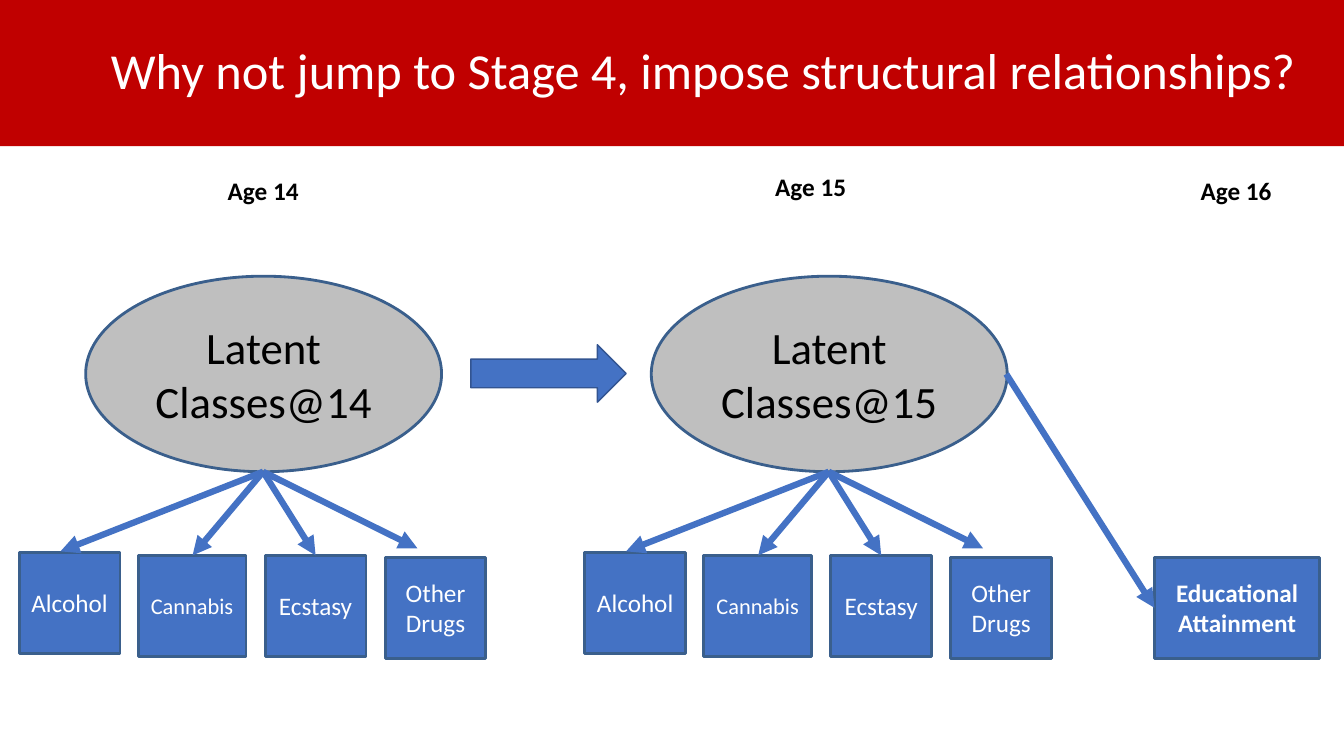
import pptx
import pptx.util
import pptx.dml.color
import pptx.enum.shapes
import pptx.enum.text
import pptx.oxml.ns
import lxml.etree

Inches = pptx.util.Inches
Pt = pptx.util.Pt
SHAPE = pptx.enum.shapes.MSO_SHAPE
ALIGN = pptx.enum.text.PP_ALIGN
MIDDLE = pptx.enum.text.MSO_ANCHOR.MIDDLE
BLUE, EDGE, WHITE, BLACK = "4472C4", "3A5F8C", "FFFFFF", "000000"
DRUGS = [
    ("Alcohol", 0, 2.74, 1, 18, 0.41, 2.73),
    ("Cannabis", 1.18, 2.77, 1.07, 16, 1.72, 2.77),
    ("Ecstasy", 2.44, 2.77, 1, 18, 2.94, 2.77),
    ("Other Drugs", 3.63, 2.79, 1, 18, 3.95, 2.7),
]


def paint(target, color):
    """Give a fill or line fill a solid colour."""
    target.solid()
    target.fore_color.rgb = pptx.dml.color.RGBColor.from_string(color)


def write(frame, text, size, color, align=ALIGN.CENTER, bold=False):
    """Put one formatted paragraph in a text frame."""
    frame.text = text
    line = frame.paragraphs[0]
    line.alignment = align
    line.font.name = "Calibri"
    line.font.size = Pt(size)
    line.font.bold = bold
    paint(line.font.fill, color)
    return line


def node(slide, kind, box, fill, edge=EDGE, width=2):
    """Draw a filled and outlined shape in a box."""
    shape = slide.shapes.add_shape(kind, *map(Inches, box))
    shape.shadow.inherit = False
    paint(shape.fill, fill)
    paint(shape.line.fill, edge)
    shape.line.width = Pt(width)
    shape.text_frame.word_wrap = True
    shape.text_frame.vertical_anchor = MIDDLE
    return shape


def arrow(slide, start, end):
    """Draw a thick line with a triangle at its end."""
    straight = pptx.enum.shapes.MSO_CONNECTOR.STRAIGHT
    link = slide.shapes.add_connector(straight, *map(Inches, start + end))
    paint(link.line.fill, BLUE)
    link.line.width = Pt(4.5)
    qn = pptx.oxml.ns.qn
    head = lxml.etree.SubElement(link.line._get_or_add_ln(), qn("a:tailEnd"))
    head.set("type", "triangle")
    lxml.etree.SubElement(link._element.spPr, qn("a:effectLst"))


def banner(slide, box, text):
    """Fill the title band across the top."""
    title = slide.shapes.title
    title.left, title.top, title.width, title.height = map(Inches, box)
    paint(title.fill, "C00000")
    frame = title.text_frame
    frame.auto_size = pptx.enum.text.MSO_AUTO_SIZE.NONE
    frame.word_wrap = True
    frame.vertical_anchor = MIDDLE
    frame.margin_left = Inches(1.1)
    write(frame, text, 36, WHITE, ALIGN.LEFT).line_spacing = 0.9


def label(slide, left, top, text):
    """Place an age heading."""
    box = slide.shapes.add_textbox(*map(Inches, (left, top, 0.91, 0.4)))
    box.text_frame.word_wrap = False
    write(box.text_frame, text, 18, BLACK, ALIGN.LEFT, True)


def model(slide, left, top, age):
    """Draw the latent classes of one age above their four drugs."""
    oval = node(slide, SHAPE.OVAL, (left + 0.66, top, 3.53, 1.94), "BFBFBF")
    write(oval.text_frame, f"Latent Classes@{age}", 32, BLACK)
    for name, x, y, width, size, tipx, tipy in DRUGS:
        box = (left + x, top + y, width, 1)
        drug = node(slide, SHAPE.RECTANGLE, box, BLUE)
        write(drug.text_frame, name, size, WHITE)
        arrow(slide, (left + 2.42, top + 1.94), (left + tipx, top + tipy))


def result(slide, box, start):
    """Draw the outcome box and the arrow that leads to it."""
    goal = node(slide, SHAPE.RECTANGLE, box, BLUE)
    write(goal.text_frame, "Educational Attainment", 18, WHITE, bold=True)
    arrow(slide, start, (box[0], box[1] + box[3] / 2))


def main():
    """Build and save the slide."""
    deck = pptx.Presentation()
    deck.slide_width = Inches(13.33)
    deck.slide_height = Inches(7.5)
    slide = deck.slides.add_slide(deck.slide_layouts[5])
    banner(slide, (0, 0, 13.33, 1.45),
           "Why not jump to Stage 4, impose structural relationships?")
    for age, left, top in ((14, 2.16, 1.69), (15, 7.59, 1.65), (16, 11.81, 1.69)):
        label(slide, left, top, f"Age {age}")
    for age, left in ((14, 0.19), (15, 5.8)):
        model(slide, left, 2.74, age)
    node(slide, SHAPE.RIGHT_ARROW, (4.67, 3.42, 1.54, 0.57), BLUE, "325491", 1)
    result(slide, (11.45, 5.53, 1.64, 1), (9.98, 3.71))
    deck.save("out.pptx")


if __name__ == "__main__":
    main()
